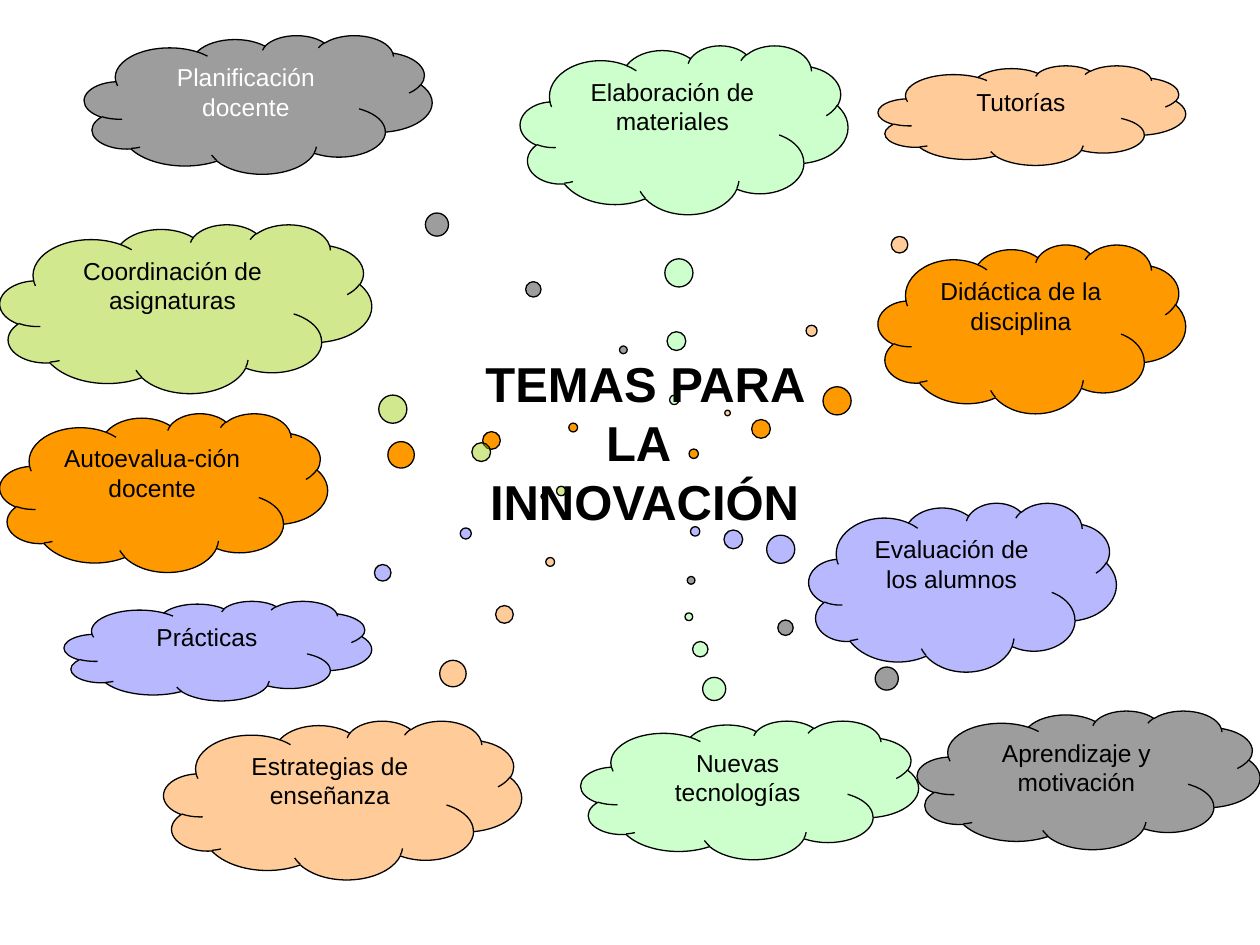
from pptx import Presentation
from pptx.dml.color import RGBColor
from pptx.enum.shapes import MSO_SHAPE
from pptx.enum.text import MSO_ANCHOR, PP_ALIGN
from pptx.oxml.ns import qn
from pptx.util import Inches, Pt
from lxml import etree

BLACK, WHITE = "000000", "FFFFFF"
# Fill colour and opacity in percent
GRAY, LIME, BLUE = ("212121", 44), ("99CC00", 44), ("0000FF", 28)
MINT, ORANGE, PEACH = ("CCFFCC", 100), ("FF9900", 100), ("FFCC99", 100)

# Text, box, tail offset from the centre as a share of the box, fill, text colour
TOPICS = [
    ("Planificación docente", (0.67, 0.28, 2.76, 1.1), (1.05, 1.77), GRAY, WHITE),
    ("Nuevas tecnologías", (4.61, 5.72, 2.68, 1.1), (-0.18, -1.25), MINT, BLACK),
    ("Evaluación de los alumnos", (6.42, 3.99, 2.44, 1.34), (-0.87, -0.33), BLUE, BLACK),
    ("Didáctica de la disciplina", (6.97, 1.94, 2.44, 1.34), (-1.1, 0.74), ORANGE, BLACK),
    ("Tutorías", (6.97, 0.52, 2.44, 0.79), (-0.99, 2.99), PEACH, BLACK),
    ("Autoevalua-ción docente", (0, 3.28, 2.6, 1.26), (1.25, -0.41), ORANGE, BLACK),
    ("Prácticas", (0.51, 4.77, 2.44, 0.79), (1.06, -1.55), BLUE, BLACK),
    ("Estrategias de enseñanza", (1.3, 5.72, 2.84, 1.26), (0.58, -1.5), PEACH, BLACK),
    ("Elaboración de materiales", (4.13, 0.36, 2.6, 1.34), (-0.03, 1.6), MINT, BLACK),
    ("Aprendizaje y motivación", (7.28, 5.64, 2.72, 1.1), (-1.16, -1.44), GRAY, BLACK),
    ("Coordinación de asignaturas", (0, 1.78, 2.95, 1.34), (1.01, 1.08), LIME, BLACK),
]


def rgb(value):
    return RGBColor.from_string(value)


def write_text(tf, *lines, size=14, color=BLACK, bold=False):
    tf.word_wrap = True
    tf.vertical_anchor = MSO_ANCHOR.TOP
    for i, line in enumerate(lines):
        p = tf.add_paragraph() if i else tf.paragraphs[0]
        p.alignment = PP_ALIGN.CENTER
        r = p.add_run()
        r.text = line
        r.font.name = "Arial"
        r.font.size = Pt(size)
        r.font.bold = bold
        r.font.color.rgb = rgb(color)


def set_fill(sp, color, opacity):
    sp.fill.solid()
    sp.fill.fore_color.rgb = rgb(color)
    if opacity < 100:
        clr = sp.fill._xPr.find(qn("a:solidFill"))[0]
        etree.SubElement(clr, qn("a:alpha")).set("val", str(opacity * 1000))


def add_thought_cloud(slide, text, box, tail, fill, color):
    sp = slide.shapes.add_shape(MSO_SHAPE.CLOUD_CALLOUT, *map(Inches, box))
    for i, offset in enumerate(tail):
        sp.adjustments[i] = offset
    sp.shadow.inherit = False
    set_fill(sp, *fill)
    sp.line.color.rgb = rgb(BLACK)
    sp.line.width = Pt(0.75)
    write_text(sp.text_frame, text, color=color)


def add_title(slide, box):
    sp = slide.shapes.add_textbox(*map(Inches, box))
    write_text(sp.text_frame, "TEMAS PARA LA ", "INNOVACIÓN", size=28, bold=True)


def main():
    prs = Presentation()
    prs.slide_width, prs.slide_height = Inches(10), Inches(7.5)
    slide = prs.slides.add_slide(prs.slide_layouts[6])
    for topic in TOPICS:
        add_thought_cloud(slide, *topic)
    add_title(slide, (3.72, 2.76, 2.79, 1.51))
    prs.save("out.pptx")


if __name__ == "__main__":
    main()
